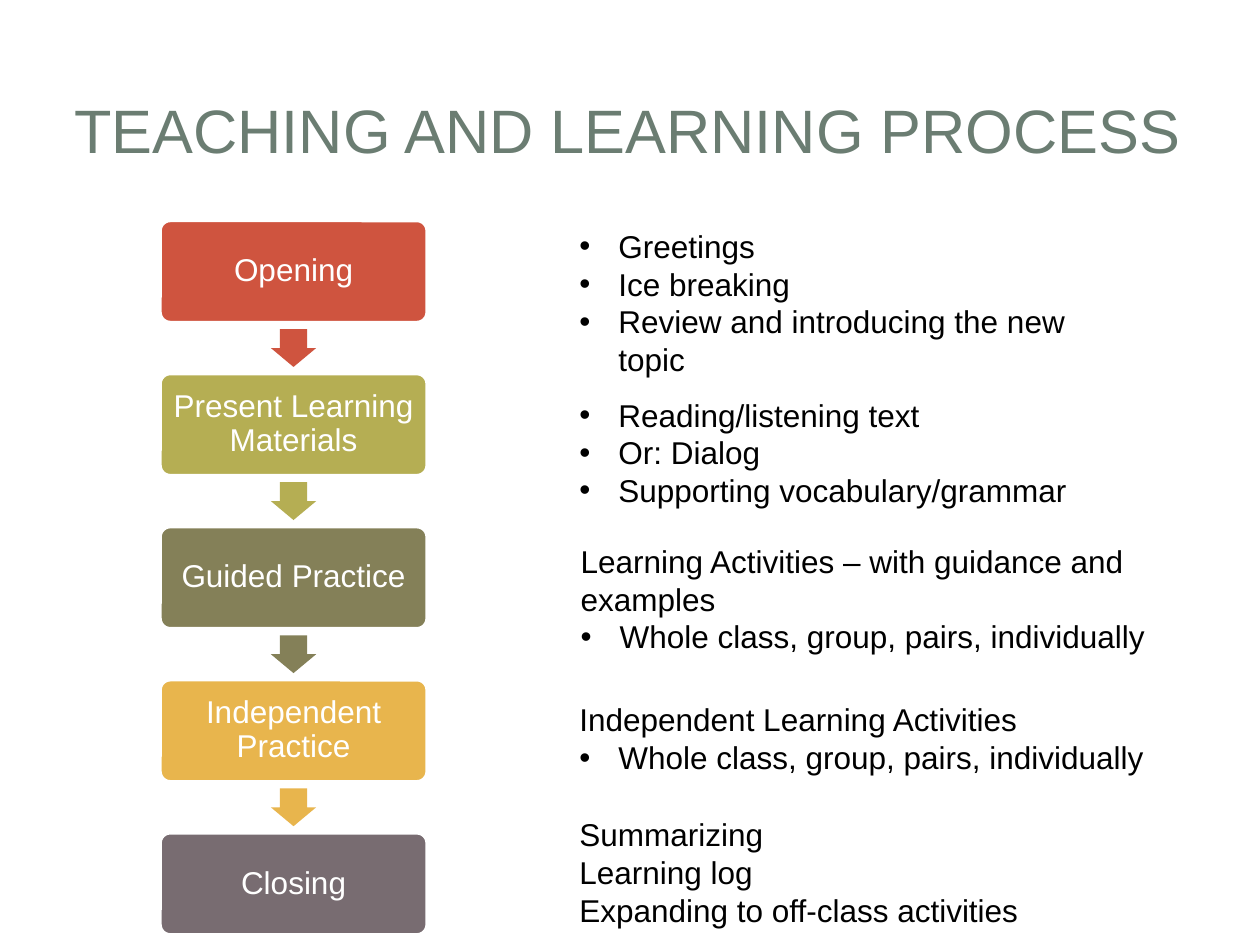
import pptx
import pptx.dml.color
import pptx.enum.shapes
import pptx.enum.text
import pptx.oxml
import pptx.util

Inches = pptx.util.Inches
Pt = pptx.util.Pt
SHAPES = pptx.enum.shapes.MSO_SHAPE
ALIGN = pptx.enum.text.PP_ALIGN
MIDDLE = pptx.enum.text.MSO_ANCHOR.MIDDLE

COLORS = {
    "title": "6B7D72",
    "text": "000000",
    "white": "FFFFFF",
    "opening": "CF543F",
    "present": "B5AE53",
    "guided": "848058",
    "independent": "E8B54D",
    "closing": "786C71",
}

# Flow column: five equal steps with an arrow centred in each gap
STEP_LEFT, STEP_WIDTH, STEP_HEIGHT = 1.27, 2.12, 0.81
FIRST_TOP, LAST_TOP = 1.75, 6.61
ARROW_WIDTH, ARROW_HEIGHT = 0.36, 0.3
BULLET_INDENT = 0.31

STEPS = [
    ("Opening", "opening"),
    ("Present Learning Materials", "present"),
    ("Guided Practice", "guided"),
    ("Independent Practice", "independent"),
    ("Closing", "closing"),
]

# Left, top, width, height, then (text, bulleted) lines
DETAILS = [
    (4.5, 1.75, 4.25, 1.31, [("Greetings", True), ("Ice breaking", True),
                             ("Review and introducing the new topic", True)]),
    (4.5, 3.09, 4.25, 1.01, [("Reading/listening text", True), ("Or: Dialog", True),
                             ("Supporting vocabulary/grammar", True)]),
    (4.51, 4.25, 4.75, 1.01, [("Learning Activities – with guidance and examples", False),
                              ("Whole class, group, pairs, individually", True)]),
    (4.5, 5.51, 4.75, 0.71, [("Independent Learning Activities", False),
                             ("Whole class, group, pairs, individually", True)]),
    (4.5, 6.42, 4.75, 1.01, [("Summarizing", False), ("Learning log", False),
                             ("Expanding to off-class activities", False)]),
]


def rgb(name):
    return pptx.dml.color.RGBColor.from_string(COLORS[name])


def add_run(paragraph, text, size, color):
    run = paragraph.add_run()
    run.text = text
    run.font.name = "Arial"
    run.font.size = Pt(size)
    run.font.color.rgb = rgb(color)


def set_bullet(paragraph):
    props = paragraph._p.get_or_add_pPr()
    props.set("marL", str(Inches(BULLET_INDENT)))
    props.set("indent", str(-Inches(BULLET_INDENT)))
    for tag, key, value in (("a:buFont", "typeface", "Arial"), ("a:buChar", "char", "•")):
        bullet = pptx.oxml.xmlchemy.OxmlElement(tag)
        bullet.set(key, value)
        props.append(bullet)


def add_filled(slide, preset, left, top, width, height, color):
    shape = slide.shapes.add_shape(
        preset, Inches(left), Inches(top), Inches(width), Inches(height))
    shape.shadow.inherit = False
    shape.fill.solid()
    shape.fill.fore_color.rgb = rgb(color)
    shape.line.fill.background()
    return shape


def add_title(slide, text):
    title = slide.shapes.title
    title.left, title.top = Inches(0.47), Inches(0.45)
    title.width, title.height = Inches(9.03), Inches(1.14)
    frame = title.text_frame
    frame.margin_left = frame.margin_right = Inches(0.05)
    frame.vertical_anchor = MIDDLE
    heading = frame.paragraphs[0]
    heading.alignment = ALIGN.CENTER
    add_run(heading, text, 35, "title")


def add_step(slide, top, label, color):
    step = add_filled(slide, SHAPES.ROUNDED_RECTANGLE,
                      STEP_LEFT, top, STEP_WIDTH, STEP_HEIGHT, color)
    step.adjustments[0] = 0.1
    step.line.color.rgb = rgb("white")
    step.line.width = Pt(2)
    frame = step.text_frame
    frame.word_wrap = True
    frame.vertical_anchor = MIDDLE
    frame.margin_left = frame.margin_right = Inches(0.07)
    frame.margin_top = frame.margin_bottom = Inches(0.07)
    caption = frame.paragraphs[0]
    caption.alignment = ALIGN.CENTER
    caption.line_spacing = 0.9
    add_run(caption, label, 18, "white")


def add_arrow(slide, step_top, pitch, color):
    left = STEP_LEFT + (STEP_WIDTH - ARROW_WIDTH) / 2
    top = step_top + (STEP_HEIGHT + pitch - ARROW_HEIGHT) / 2
    arrow = add_filled(slide, SHAPES.DOWN_ARROW, left, top, ARROW_WIDTH, ARROW_HEIGHT, color)
    arrow.adjustments[0] = 0.6
    arrow.adjustments[1] = 0.5


def add_details(slide, left, top, width, height, lines):
    details = slide.shapes.add_textbox(
        Inches(left), Inches(top), Inches(width), Inches(height))
    frame = details.text_frame
    frame.word_wrap = True
    for index, (text, bulleted) in enumerate(lines):
        line = frame.add_paragraph() if index else frame.paragraphs[0]
        if bulleted:
            set_bullet(line)
        add_run(line, text, 18, "text")


def main():
    deck = pptx.Presentation()
    deck.slide_width, deck.slide_height = Inches(10), Inches(7.5)
    slide = deck.slides.add_slide(deck.slide_layouts[5])
    add_title(slide, "TEACHING AND LEARNING PROCESS")

    # Flow of steps
    pitch = (LAST_TOP - FIRST_TOP) / (len(STEPS) - 1)
    for index, (label, color) in enumerate(STEPS):
        top = FIRST_TOP + index * pitch
        add_step(slide, top, label, color)
        if index < len(STEPS) - 1:
            add_arrow(slide, top, pitch, color)

    # Details beside each step
    for left, top, width, height, lines in DETAILS:
        add_details(slide, left, top, width, height, lines)

    deck.save("out.pptx")


if __name__ == "__main__":
    main()
